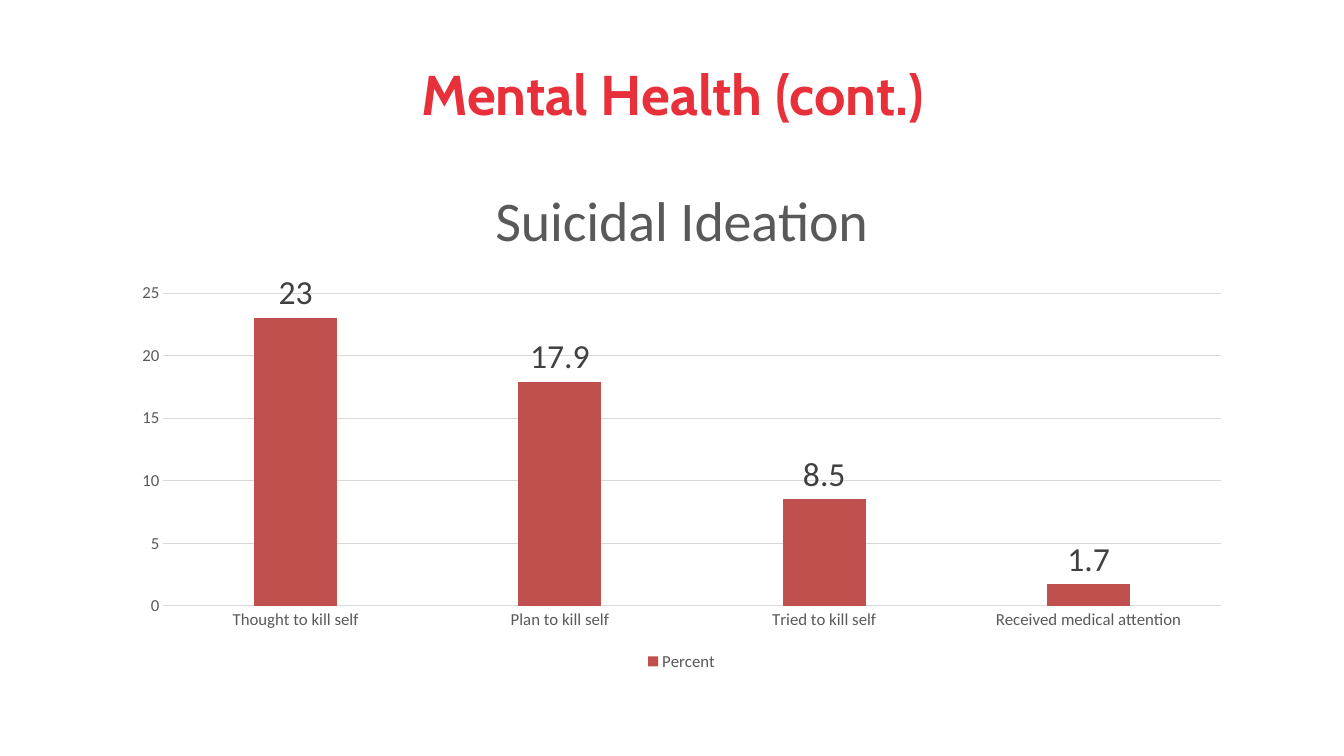
"""Build the Mental Health slide with its column chart."""
import pptx
import pptx.chart.data
import pptx.dml.color
import pptx.enum.chart
import pptx.enum.text
import pptx.util

Inches, Pt = pptx.util.Inches, pptx.util.Pt
RGBColor = pptx.dml.color.RGBColor
xl = pptx.enum.chart

RED = RGBColor(0xE8, 0x30, 0x3B)
BRICK = RGBColor(0xC0, 0x50, 0x4D)
GREY = RGBColor(0x59, 0x59, 0x59)
DARK = RGBColor(0x40, 0x40, 0x40)
PALE = RGBColor(0xD9, 0xD9, 0xD9)

TITLE = "Mental Health (cont.)"
CHART_TITLE = "Suicidal Ideation"
SERIES = "Percent"
VALUES = {
    "Thought to kill self": 23,
    "Plan to kill self": 17.9,
    "Tried to kill self": 8.5,
    "Received medical attention": 1.7,
}
TITLE_BOX = (0.67, 0.3, 12, 1.25)
CHART_BOX = (1.19, 1.55, 11.14, 5.15)
TITLE_FONT = {"name": "Cabin", "size": Pt(40), "bold": True, "color": RED}
HEADING_FONT = {"name": "Calibri", "size": Pt(40), "bold": False, "color": GREY}
AXIS_FONT = {"name": "Calibri", "size": Pt(12), "bold": False, "color": GREY}
LABEL_FONT = {"name": "Calibri", "size": Pt(24), "bold": False, "color": DARK}


def style(font, values):
    """Apply a dict of format values to a font."""
    for key, value in values.items():
        if key == "color":
            font.color.rgb = value
        else:
            setattr(font, key, value)


def add_title(s):
    """Fill and place the title placeholder."""
    sp = s.shapes.title
    sp.left, sp.top, sp.width, sp.height = map(Inches, TITLE_BOX)
    tf = sp.text_frame
    tf.vertical_anchor = pptx.enum.text.MSO_ANCHOR.MIDDLE
    p = tf.paragraphs[0]
    p.alignment = pptx.enum.text.PP_ALIGN.CENTER
    r = p.add_run()
    r.text = TITLE
    style(r.font, TITLE_FONT)


def add_columns(s):
    """Add the column chart with its title, axes, labels and legend."""
    data = pptx.chart.data.CategoryChartData()
    data.categories = list(VALUES)
    data.add_series(SERIES, list(VALUES.values()))
    chart = s.shapes.add_chart(
        xl.XL_CHART_TYPE.COLUMN_CLUSTERED, *map(Inches, CHART_BOX), data
    ).chart
    style(chart.font, AXIS_FONT)

    chart.has_title = True
    chart.chart_title.include_in_layout = False
    r = chart.chart_title.text_frame.paragraphs[0].add_run()
    r.text = CHART_TITLE
    style(r.font, HEADING_FONT)

    chart.has_legend = True
    chart.legend.position = xl.XL_LEGEND_POSITION.BOTTOM
    chart.legend.include_in_layout = False
    style(chart.legend.font, AXIS_FONT)

    for axis in (chart.category_axis, chart.value_axis):
        axis.major_tick_mark = axis.minor_tick_mark = xl.XL_TICK_MARK.NONE
        style(axis.tick_labels.font, AXIS_FONT)
    chart.value_axis.format.line.fill.background()
    chart.value_axis.has_major_gridlines = True
    for part in (chart.category_axis, chart.value_axis.major_gridlines):
        part.format.line.color.rgb = PALE
        part.format.line.width = Pt(0.75)

    plot = chart.plots[0]
    plot.vary_by_categories = False
    plot.gap_width, plot.overlap = 219, -27
    series = plot.series[0]
    series.format.fill.solid()
    series.format.fill.fore_color.rgb = BRICK
    labels = series.data_labels
    labels.show_value = True
    labels.position = xl.XL_LABEL_POSITION.OUTSIDE_END
    style(labels.font, LABEL_FONT)


def main():
    """Build and save the slide."""
    prs = pptx.Presentation()
    prs.slide_width, prs.slide_height = Inches(13.33), Inches(7.5)
    s = prs.slides.add_slide(prs.slide_layouts[5])
    add_title(s)
    add_columns(s)
    prs.save("out.pptx")


if __name__ == "__main__":
    main()
